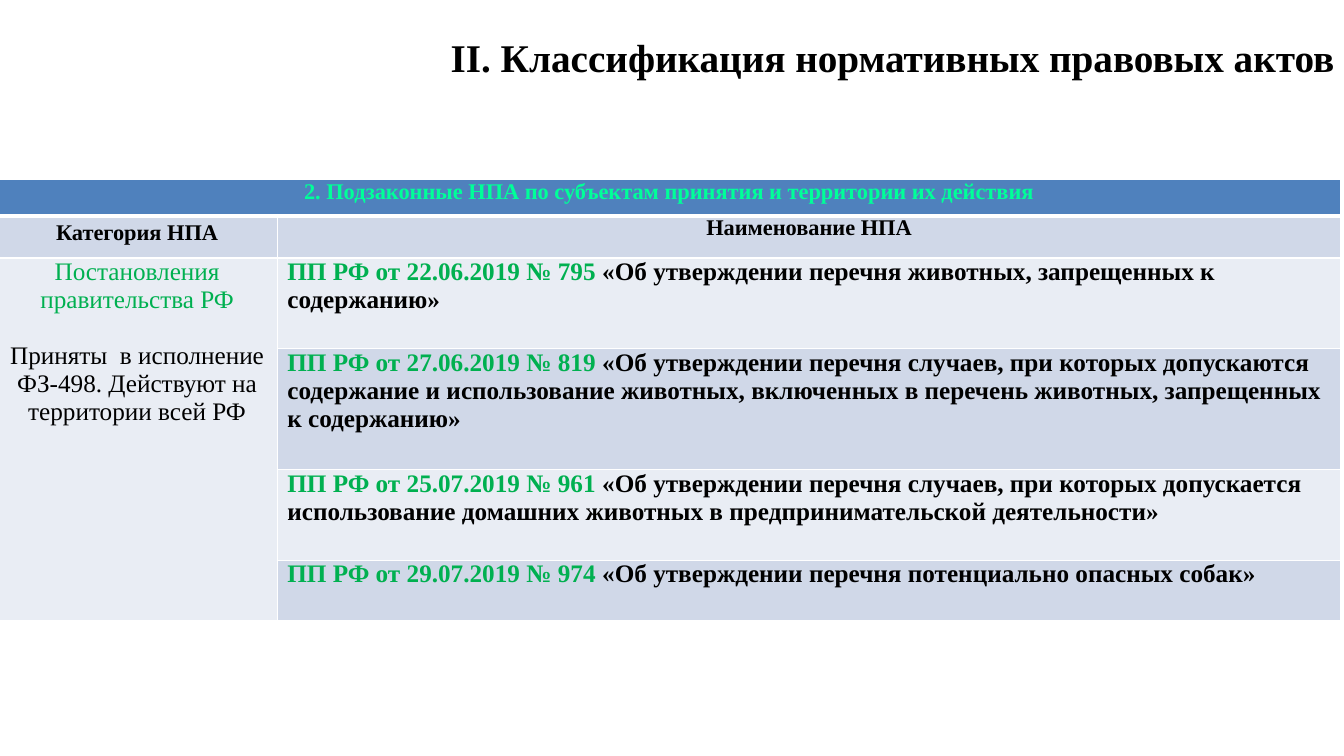
from lxml import etree
from pptx import Presentation
from pptx.dml.color import RGBColor
from pptx.enum.text import MSO_ANCHOR, PP_ALIGN
from pptx.oxml.ns import qn
from pptx.util import Inches, Pt

LEFT, CENTER, RIGHT = PP_ALIGN.LEFT, PP_ALIGN.CENTER, PP_ALIGN.RIGHT
TOP = MSO_ANCHOR.TOP
FONT = "Times New Roman"
COLORS = {
    "black": "000000",
    "white": "FFFFFF",
    "green": "00B050",
    "mint": "00FF99",
    "banner": "4F81BD",
    "dark_band": "D0D8E8",
    "light_band": "E9EDF4",
}
COLUMN_WIDTHS = [2.78, 10.55]
ROW_HEIGHTS = [0.36, 0.42, 0.9, 1.2, 0.9, 0.6]
FIRST_ACT_ROW = 2

BANNER = "2. Подзаконные НПА по субъектам принятия и территории их действия"
CATEGORY = [
    ("Постановления правительства РФ", "green"),
    ("Приняты  в исполнение ФЗ-498. Действуют на территории всей РФ", "black"),
]
ACTS = [
    ("ПП РФ от 22.06.2019 № 795 ",
     "«Об утверждении перечня животных, запрещенных к содержанию»"),
    ("ПП РФ от 27.06.2019 № 819 ",
     "«Об утверждении перечня случаев, при которых допускаются содержание и "
     "использование животных, включенных в перечень животных, запрещенных к содержанию»"),
    ("ПП РФ от 25.07.2019 № 961 ",
     "«Об утверждении перечня случаев, при которых допускается использование "
     "домашних животных в предпринимательской деятельности»"),
    ("ПП РФ от 29.07.2019 № 974 ",
     "«Об утверждении перечня потенциально опасных собак»"),
]


def rgb(name):
    return RGBColor.from_string(COLORS[name])


def write(paragraph, runs, size, bold, align):
    paragraph.alignment = align
    paragraph.font.name = FONT
    paragraph.font.size = Pt(size)
    paragraph.font.bold = bold
    for text, color in runs:
        run = paragraph.add_run()
        run.text = text
        run.font.color.rgb = rgb(color)


def style_cell(cell, fill, bottom_width=1, margins=(0.1, 0)):
    side, end = (Inches(margin) for margin in margins)
    cell.margin_left = cell.margin_right = side
    cell.margin_top = cell.margin_bottom = end
    cell.vertical_anchor = TOP
    cell.fill.solid()
    cell.fill.fore_color.rgb = rgb(fill)

    # Borders precede the fill in the cell properties
    properties = cell._tc.get_or_add_tcPr()
    for index, edge in enumerate("LRTB"):
        width = bottom_width if edge == "B" else 1
        line = etree.Element(qn(f"a:ln{edge}"), w=str(Pt(width)))
        solid = etree.SubElement(line, qn("a:solidFill"))
        etree.SubElement(solid, qn("a:srgbClr"), val=COLORS["white"])
        properties.insert(index, line)


def add_title(slide, left, top, width, height):
    title = slide.shapes.add_textbox(
        Inches(left), Inches(top), Inches(width), Inches(height)).text_frame
    title.word_wrap = True
    heading = title.paragraphs[0]
    heading.line_spacing = 1.5
    write(heading, [("II. Классификация нормативных правовых актов", "black")],
          28, True, RIGHT)


def add_acts_table(slide, left, top):
    table = slide.shapes.add_table(
        len(ROW_HEIGHTS), len(COLUMN_WIDTHS), Inches(left), Inches(top),
        Inches(sum(COLUMN_WIDTHS)), Inches(sum(ROW_HEIGHTS))).table
    for column, width in zip(table.columns, COLUMN_WIDTHS):
        column.width = Inches(width)
    for row, height in zip(table.rows, ROW_HEIGHTS):
        row.height = Inches(height)

    # Banner across both columns
    banner = table.cell(0, 0)
    banner.merge(table.cell(0, 1))
    for column in range(2):
        style_cell(table.cell(0, column), "banner", bottom_width=3)
    write(banner.text_frame.paragraphs[0], [(BANNER, "mint")], 16, True, CENTER)

    # Column headings
    headings = [("Категория НПА", (0.13, 0.05)), ("Наименование НПА", (0.1, 0))]
    for column, (heading, margins) in enumerate(headings):
        cell = table.cell(1, column)
        style_cell(cell, "dark_band", margins=margins)
        write(cell.text_frame.paragraphs[0], [(heading, "black")], 16, True, CENTER)

    # Acts, one a row
    for index, (number, subject) in enumerate(ACTS):
        row = FIRST_ACT_ROW + index
        style_cell(table.cell(row, 0), "light_band")
        act = table.cell(row, 1)
        style_cell(act, "dark_band" if index % 2 else "light_band")
        write(act.text_frame.paragraphs[0],
              [(number, "green"), (subject, "black")], 18, True, LEFT)

    # Category beside all the acts
    category = table.cell(FIRST_ACT_ROW, 0)
    category.merge(table.cell(len(ROW_HEIGHTS) - 1, 0))
    frame = category.text_frame
    for index, part in enumerate(CATEGORY):
        paragraph = frame.add_paragraph() if index else frame.paragraphs[0]
        paragraph.space_before = Pt(20 * index)
        write(paragraph, [part], 18, False, CENTER)


def main():
    deck = Presentation()
    deck.slide_width, deck.slide_height = Inches(13.33), Inches(7.5)
    slide = deck.slides.add_slide(deck.slide_layouts[6])
    add_title(slide, 0, 0.05, 13.33, 0.81)
    add_acts_table(slide, -0.03, 1.78)
    deck.save("out.pptx")


if __name__ == "__main__":
    main()
